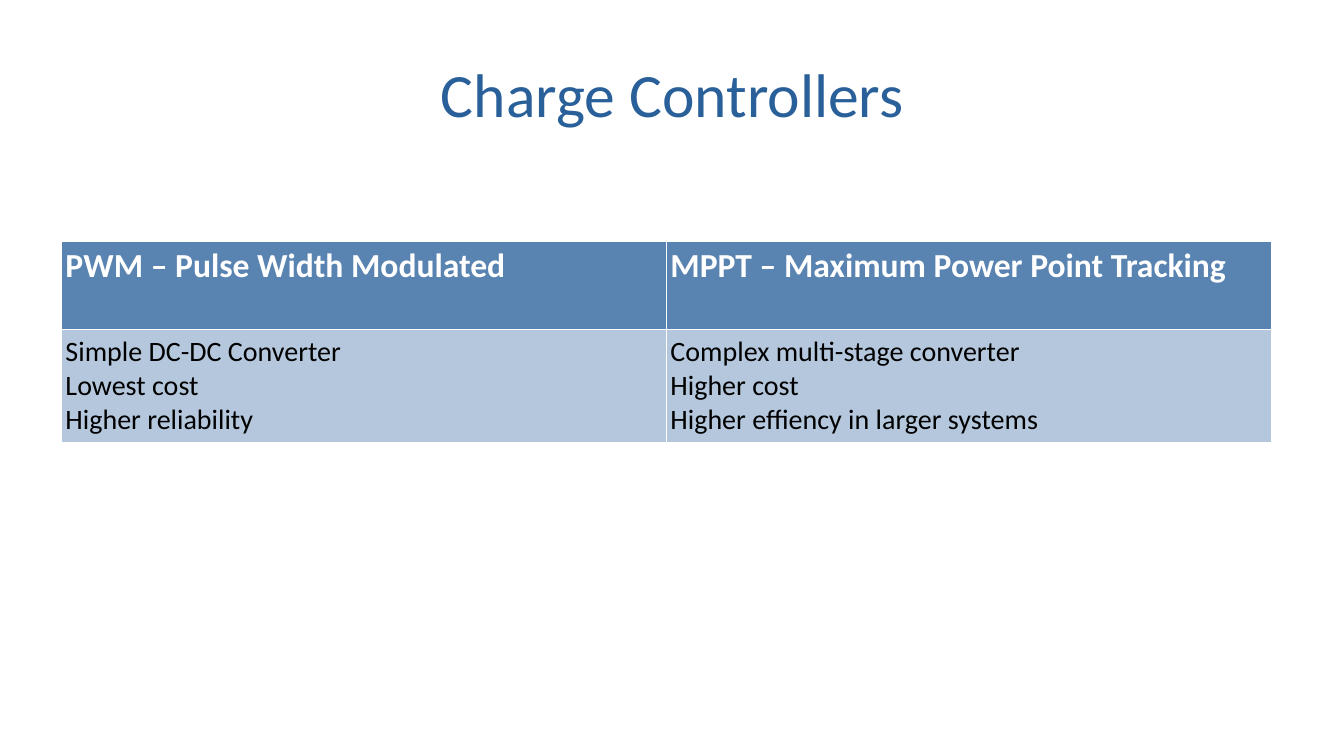
from dataclasses import dataclass

from lxml import etree
from pptx import Presentation
from pptx.dml.color import RGBColor
from pptx.enum.text import MSO_ANCHOR, PP_ALIGN
from pptx.oxml.ns import qn
from pptx.util import Inches, Pt

CENTER, LEFT = PP_ALIGN.CENTER, PP_ALIGN.LEFT
MIDDLE, TOP = MSO_ANCHOR.MIDDLE, MSO_ANCHOR.TOP
FONT = "Calibri"
BORDER_COLOR, BORDER_PT = "FFFFFF", 0.57


@dataclass
class RowStyle:
    height: float
    fill: str
    color: str
    size: int
    bold: bool


HEADER = RowStyle(0.88, "5983B0", "FFFFFF", 24, True)
BODY = RowStyle(1.12, "B4C7DC", "000000", 20, False)

CONTROLLER_ROWS = [
    (HEADER, [["PWM – Pulse Width Modulated"],
              ["MPPT – Maximum Power Point Tracking"]]),
    (BODY, [["Simple DC-DC Converter", "Lowest cost", "Higher reliability"],
            ["Complex multi-stage converter", "Higher cost",
             "Higher effiency in larger systems"]]),
]


def rgb(value: str) -> RGBColor:
    return RGBColor.from_string(value)


def write_lines(tf, lines: list[str], size: int, color: str, bold: bool, align) -> None:
    for i, line in enumerate(lines):
        p = tf.paragraphs[0] if i == 0 else tf.add_paragraph()
        p.alignment = align
        r = p.add_run()
        r.text = line
        r.font.name, r.font.size, r.font.bold = FONT, Pt(size), bold
        r.font.color.rgb = rgb(color)


def add_borders(cell) -> None:
    tc_pr = cell._tc.get_or_add_tcPr()
    # Border lines come before the fill in the cell properties
    for i, side in enumerate(("a:lnL", "a:lnR", "a:lnT", "a:lnB")):
        ln = etree.Element(qn(side), w=str(Pt(BORDER_PT)))
        solid = etree.SubElement(ln, qn("a:solidFill"))
        etree.SubElement(solid, qn("a:srgbClr"), val=BORDER_COLOR)
        tc_pr.insert(i, ln)


def format_cell(cell, lines: list[str], style: RowStyle) -> None:
    cell.margin_left = cell.margin_right = Inches(0.04)
    cell.margin_top = cell.margin_bottom = Inches(0.05)
    cell.vertical_anchor = TOP
    cell.fill.solid()
    cell.fill.fore_color.rgb = rgb(style.fill)
    add_borders(cell)
    write_lines(cell.text_frame, lines, style.size, style.color, style.bold, LEFT)


def main() -> None:
    prs = Presentation()
    prs.slide_width, prs.slide_height = Inches(13.33), Inches(7.5)
    s = prs.slides.add_slide(prs.slide_layouts[5])

    # Title
    title = s.shapes.title
    title.left, title.top = Inches(0.67), Inches(0.3)
    title.width, title.height = Inches(12), Inches(1.25)
    tf = title.text_frame
    tf.margin_left = tf.margin_right = tf.margin_top = tf.margin_bottom = 0
    tf.vertical_anchor = MIDDLE
    write_lines(tf, ["Charge Controllers"], 44, "2A6099", False, CENTER)

    # Comparison table
    height = sum(style.height for style, _ in CONTROLLER_ROWS)
    table = s.shapes.add_table(len(CONTROLLER_ROWS), 2, Inches(0.61), Inches(2.39),
                               Inches(12), Inches(height)).table
    for row, (style, cells) in zip(table.rows, CONTROLLER_ROWS):
        row.height = Inches(style.height)
        for cell, lines in zip(row.cells, cells):
            format_cell(cell, lines, style)

    prs.save("out.pptx")


if __name__ == "__main__":
    main()
